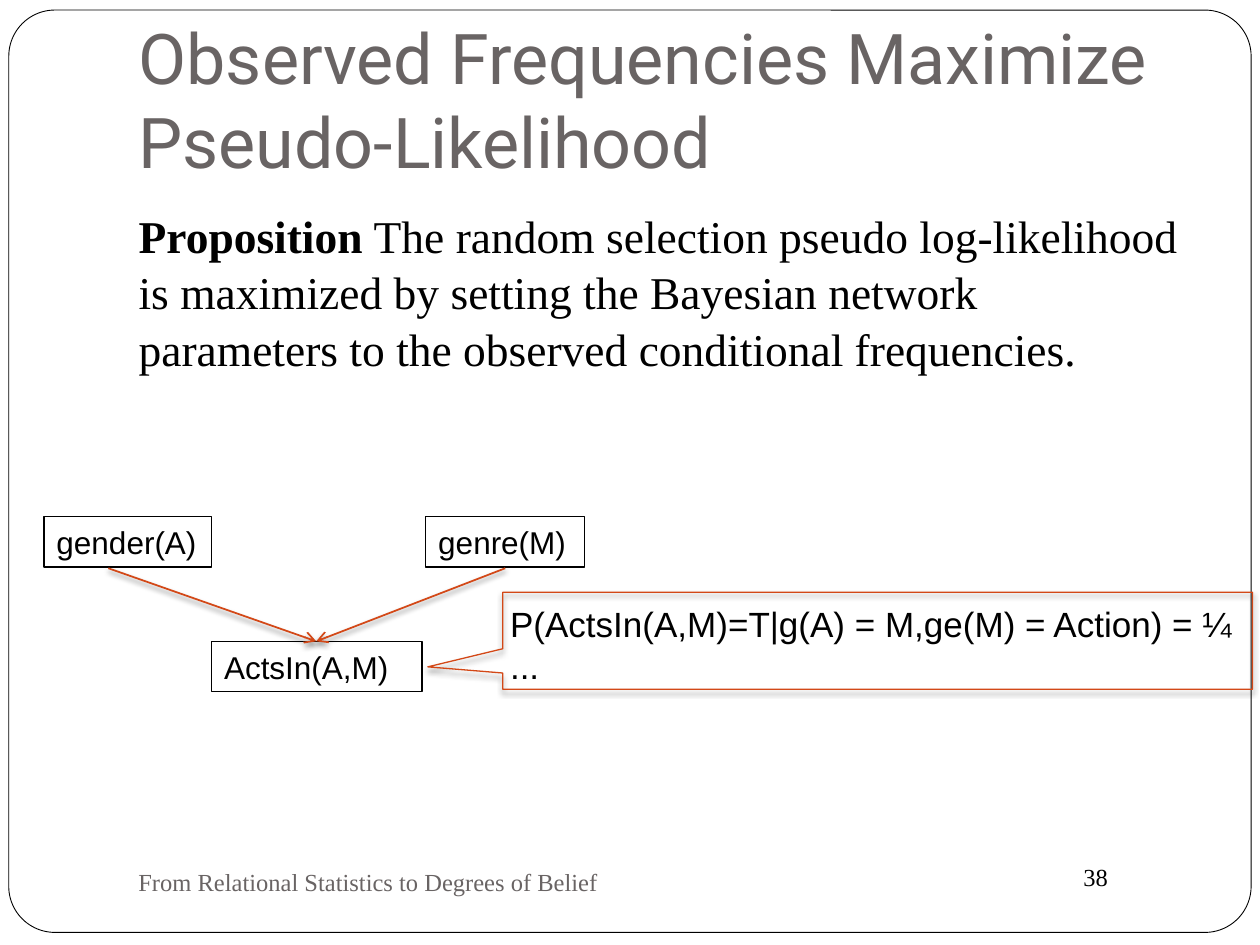
"""Build the slide on observed frequencies and pseudo-likelihood."""
import typing

import lxml.etree
import pptx
import pptx.dml.color
import pptx.enum.shapes
import pptx.enum.text
import pptx.oxml
import pptx.oxml.ns
import pptx.util

Inches = pptx.util.Inches
Pt = pptx.util.Pt
MSO_SHAPE = pptx.enum.shapes.MSO_SHAPE
ANCHOR = pptx.enum.text.MSO_ANCHOR
qn = pptx.oxml.ns.qn

COLORS = {"ink": "000000", "muted": "696464", "accent": "D34817", "paper": "FFFFFF"}
SERIF, SANS, HEADING = "Times New Roman", "Arial", "Roboto"
SHADOW = (
    '<a:effectLst xmlns:a="http://schemas.openxmlformats.org/drawingml/2006/main">'
    '<a:outerShdw blurRad="38100" dist="25400" dir="5400000" rotWithShape="0">'
    '<a:srgbClr val="000000"><a:alpha val="50000"/></a:srgbClr>'
    "</a:outerShdw></a:effectLst>"
)


class Box(typing.NamedTuple):
    left: float
    top: float
    width: float
    height: float


class Style(typing.NamedTuple):
    font: str
    size: float
    color: str = "ink"


class Node(typing.NamedTuple):
    label: str
    box: Box


class Edge(typing.NamedTuple):
    start: tuple[float, float]
    end: tuple[float, float]


NODES = [
    Node("gender(A)", Box(0.35, 4.1, 1.33, 0.4)),
    Node("ActsIn(A,M)", Box(1.68, 5.09, 1.67, 0.4)),
    Node("genre(M)", Box(3.38, 4.1, 1.26, 0.4)),
]
CHILD_TOP = (2.51, 5.09)
EDGES = [Edge((0.86, 4.51), CHILD_TOP), Edge((4.01, 4.51), CHILD_TOP)]


def rgb(name: str) -> pptx.dml.color.RGBColor:
    return pptx.dml.color.RGBColor.from_string(COLORS[name])


def place(sp, box: Box) -> None:
    sp.left, sp.top, sp.width, sp.height = map(Inches, box)


def add_run(p, text: str, style: Style, bold: bool = False) -> None:
    r = p.add_run()
    r.text = text
    r.font.name, r.font.size, r.font.bold = style.font, Pt(style.size), bold
    r.font.color.rgb = rgb(style.color)


def setup_frame(tf, anchor=ANCHOR.TOP) -> None:
    tf.word_wrap = True
    tf.auto_size = pptx.enum.text.MSO_AUTO_SIZE.NONE
    tf.vertical_anchor = anchor
    tf.paragraphs[0].alignment = pptx.enum.text.PP_ALIGN.LEFT


def add_text(shapes, box: Box, lines: list[str], style: Style, anchor=ANCHOR.TOP) -> None:
    tf = shapes.add_textbox(*map(Inches, box)).text_frame
    setup_frame(tf, anchor)
    for i, line in enumerate(lines):
        add_run(tf.add_paragraph() if i else tf.paragraphs[0], line, style)


def add_outline(shapes, kind, box: Box, color: str, width: float):
    sp = shapes.add_shape(kind, *map(Inches, box))
    sp.shadow.inherit = False
    sp.fill.background()
    sp.line.color.rgb, sp.line.width = rgb(color), Pt(width)
    return sp


def add_shadow(sp) -> None:
    properties = sp.element.spPr
    for old in properties.findall(qn("a:effectLst")):
        properties.remove(old)
    properties.append(pptx.oxml.parse_xml(SHADOW))


def add_node(shapes, node: Node) -> None:
    tf = add_outline(shapes, MSO_SHAPE.RECTANGLE, node.box, "ink", 0.75).text_frame
    setup_frame(tf)
    add_run(tf.paragraphs[0], node.label, Style(SANS, 18))


def add_edge(shapes, edge: Edge) -> None:
    line = shapes.add_connector(
        pptx.enum.shapes.MSO_CONNECTOR.STRAIGHT, *map(Inches, edge.start + edge.end)
    )
    line.line.color.rgb, line.line.width = rgb("accent"), Pt(1)
    lxml.etree.SubElement(line.line._get_or_add_ln(), qn("a:tailEnd"), type="arrow")
    add_shadow(line)


def main() -> None:
    prs = pptx.Presentation()
    prs.slide_width, prs.slide_height = Inches(10), Inches(7.5)
    s = prs.slides.add_slide(prs.slide_layouts[1])
    title, body = s.shapes.title, s.placeholders[1]

    frame = add_outline(
        s.shapes, MSO_SHAPE.ROUNDED_RECTANGLE, Box(0.07, 0.08, 9.86, 7.32), "ink", 0.5
    )
    frame.adjustments[0] = 0.05
    frame.fill.solid()
    frame.fill.fore_color.rgb = rgb("paper")
    title.element.addprevious(frame.element)

    place(title, Box(1, 0.3, 8.5, 1.25))
    setup_frame(title.text_frame, ANCHOR.BOTTOM)
    title.text_frame.margin_bottom = Inches(0.1)
    add_run(
        title.text_frame.paragraphs[0],
        "Observed Frequencies Maximize Pseudo-Likelihood",
        Style(HEADING, 40, "muted"),
    )

    place(body, Box(1, 1.58, 8.5, 1.85))
    setup_frame(body.text_frame)
    p = body.text_frame.paragraphs[0]
    p.space_before, p.line_spacing = Pt(5.8), 1.04
    ppr = p._p.get_or_add_pPr()
    ppr.set("marL", "0")
    ppr.set("indent", "0")
    lxml.etree.SubElement(ppr, qn("a:buNone"))
    add_run(p, "Proposition", Style(SERIF, 26), bold=True)
    add_run(
        p,
        " The random selection pseudo log-likelihood is maximized by setting the "
        "Bayesian network parameters to the observed conditional frequencies.",
        Style(SERIF, 26),
    )

    add_text(s.shapes, Box(8.5, 6.79, 1, 0.34), ["38"], Style(SERIF, 14))
    add_text(
        s.shapes,
        Box(1, 6.75, 4.33, 0.5),
        ["From Relational Statistics to Degrees of Belief"],
        Style(SERIF, 14, "muted"),
        ANCHOR.MIDDLE,
    )

    network = s.shapes.add_group_shape()
    for node in NODES:
        add_node(network.shapes, node)
    for edge in EDGES:
        add_edge(network.shapes, edge)

    add_text(
        s.shapes,
        Box(3.95, 4.73, 6, 0.77),
        ["P(ActsIn(A,M)=T|g(A) = M,ge(M) = Action) = ¼", "..."],
        Style(SANS, 20),
    )
    callout = add_outline(
        s.shapes, MSO_SHAPE.RECTANGULAR_CALLOUT, Box(3.99, 4.7, 5.95, 0.77), "accent", 0.75
    )
    callout.adjustments[0], callout.adjustments[1] = -0.6, 0.27
    add_shadow(callout)

    prs.save("out.pptx")


if __name__ == "__main__":
    main()
